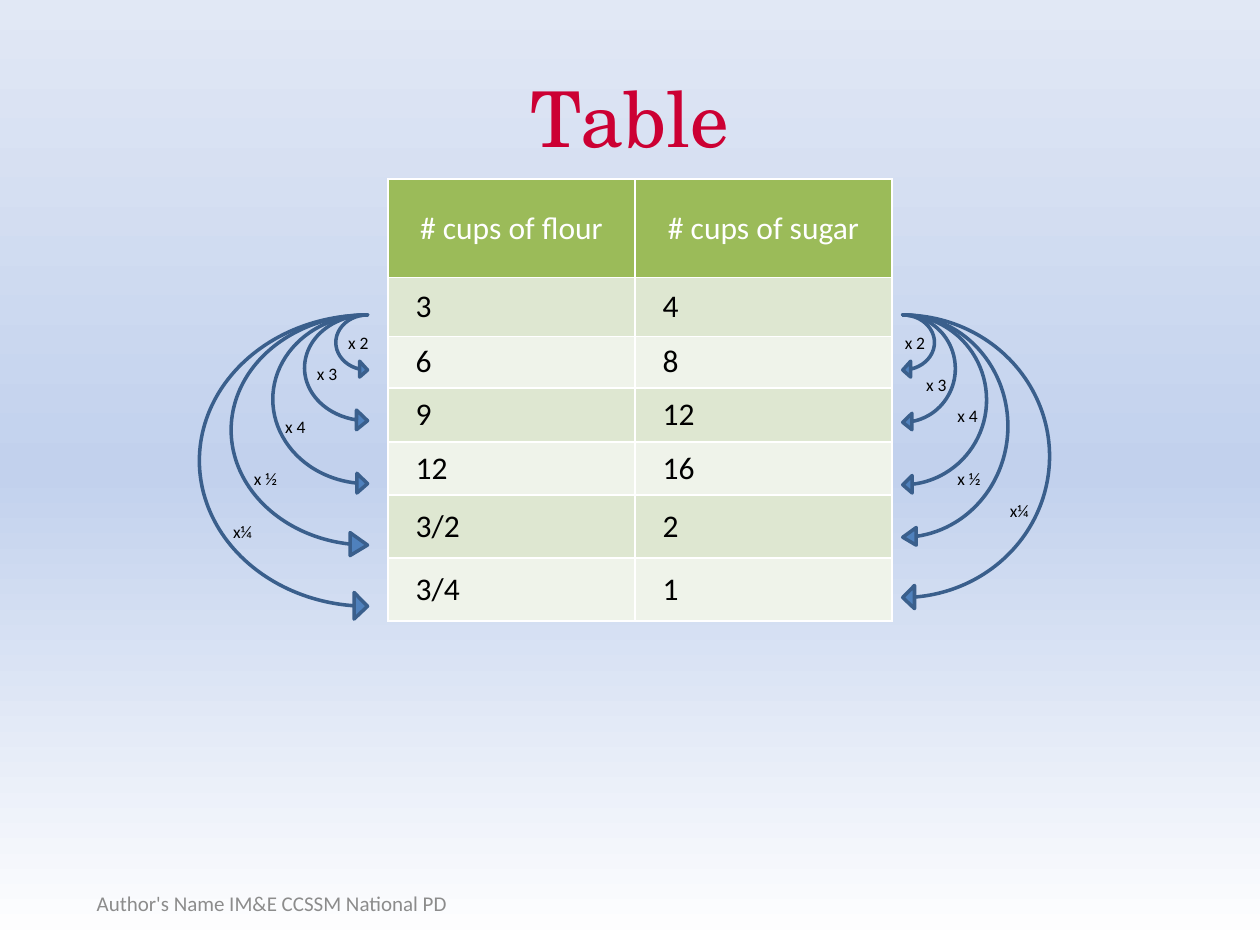
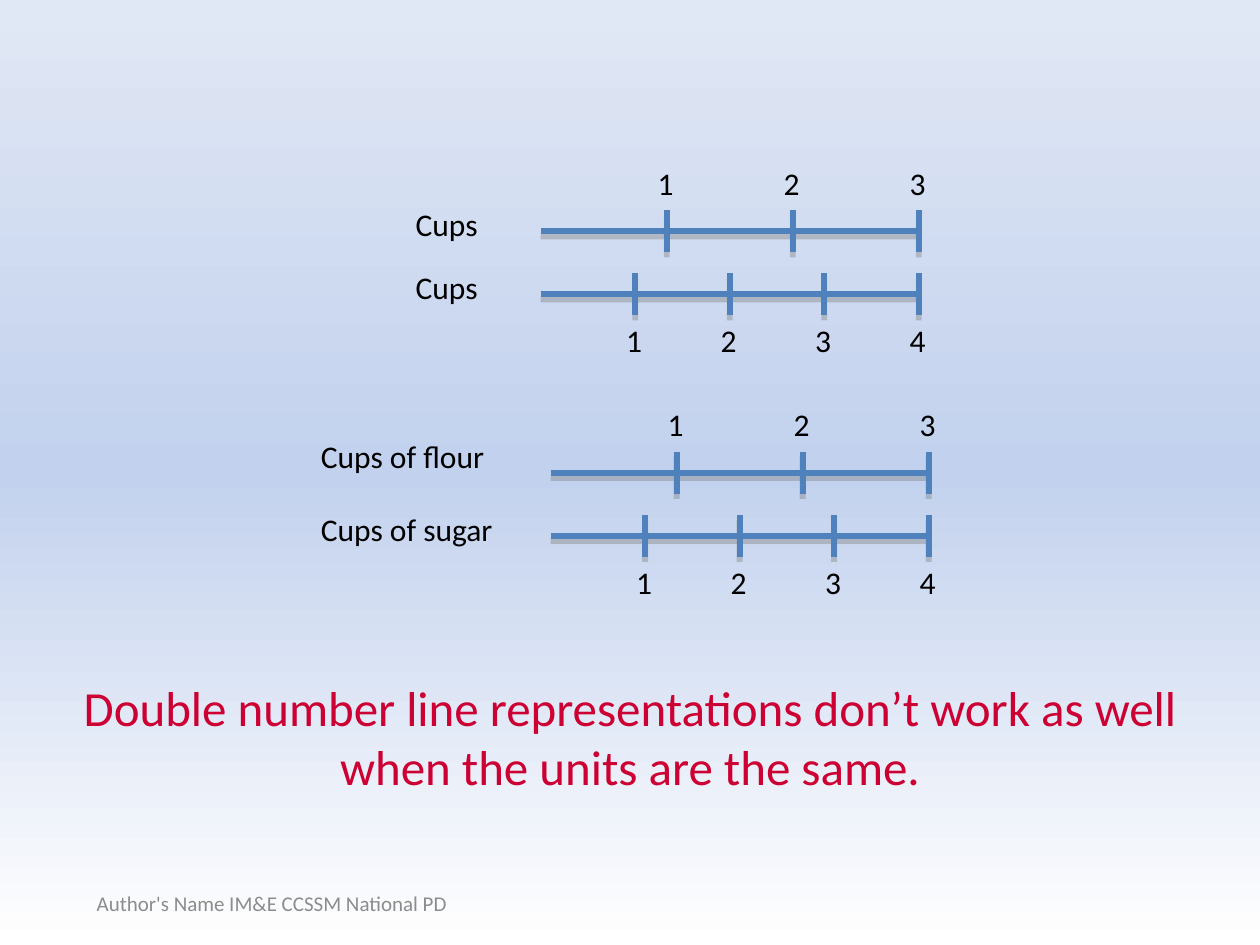
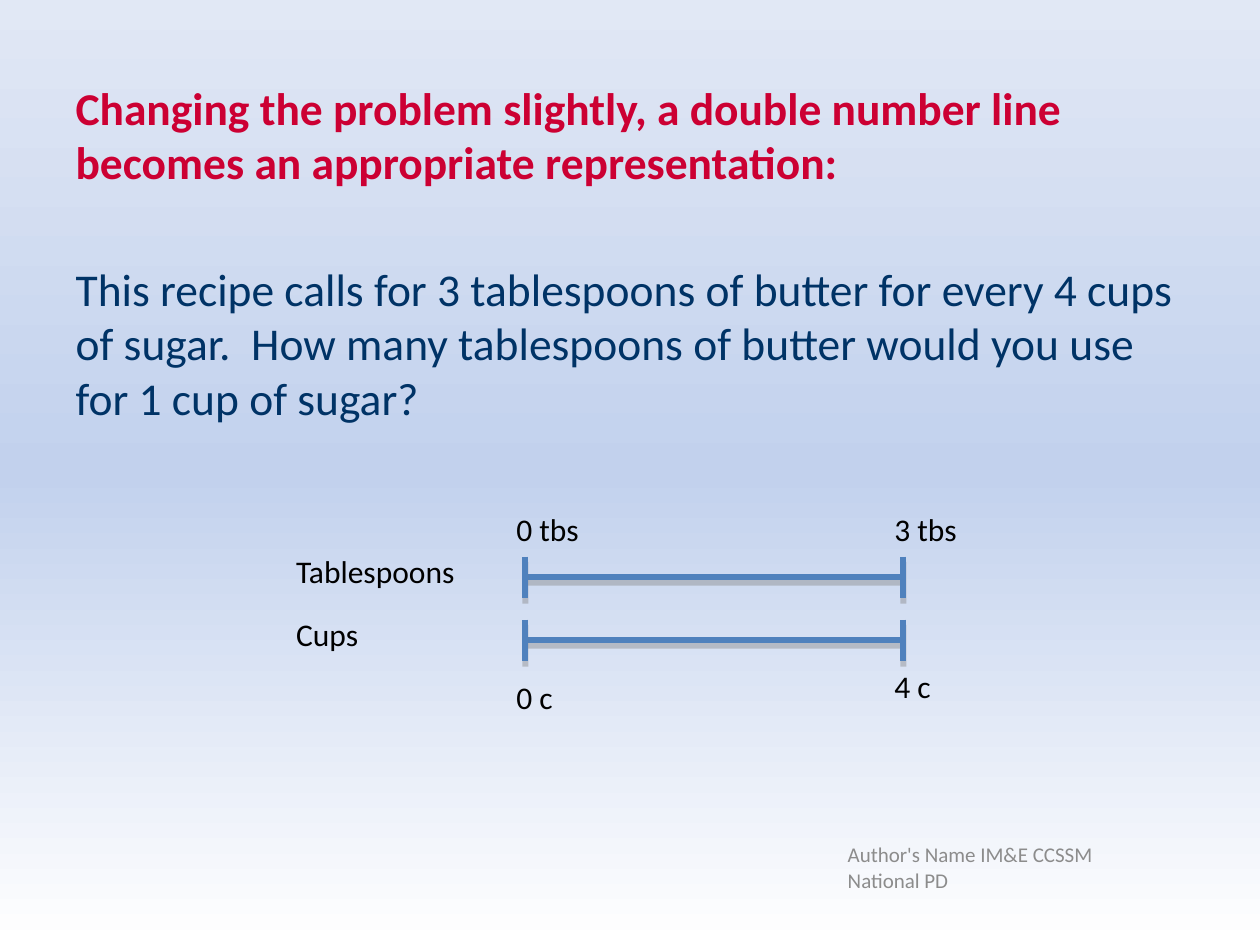
from copy import deepcopy

from lxml.etree import SubElement
from pptx import Presentation
from pptx.dml.color import RGBColor
from pptx.enum.shapes import MSO_CONNECTOR, MSO_SHAPE
from pptx.enum.text import MSO_ANCHOR, PP_ALIGN
from pptx.oxml.ns import qn
from pptx.util import Cm, Pt

WHITE = RGBColor(0xFF, 0xFF, 0xFF)
BLACK = RGBColor(0x00, 0x00, 0x00)
RED = RGBColor(0xCC, 0x00, 0x33)
NAVY = RGBColor(0x00, 0x33, 0x66)
GRAY = RGBColor(0x8C, 0x8C, 0x8C)
BLUE = RGBColor(0x4F, 0x81, 0xBD)
DARK_BLUE = RGBColor(0x3A, 0x5F, 0x8C)
GREEN = RGBColor(0x9B, 0xBB, 0x59)
LIGHT_GREEN = RGBColor(0xDE, 0xE7, 0xD1)
PALE_GREEN = RGBColor(0xEF, 0xF3, 0xEA)
BACKGROUND = [(0, WHITE), (0.5, RGBColor(0xC2, 0xD1, 0xED)), (1, RGBColor(0xE1, 0xE8, 0xF5))]

FONT = "Calibri"
TITLE_FONT = "TeX Gyre Schola"
FOOTER = "Author's Name IM&E CCSSM National PD"
LINE_LENGTH = 7.62
HALF_TICK = 0.42
ABOVE, BELOW = -1.48, 0.42


def add_text(shapes, text, x, y, w, h=1.02, size=18, color=BLACK, wrap=False):
    box = shapes.add_textbox(Cm(x), Cm(y), Cm(w), Cm(h))
    tf = box.text_frame
    tf.word_wrap = wrap
    r = tf.paragraphs[0].add_run()
    r.text = text
    r.font.name, r.font.size, r.font.color.rgb = FONT, Pt(size), color
    return tf


def add_number_line(shapes, x, y, marks, mark_w):
    """Draw a line with a tick and a text for each (fraction, text, text offset)."""
    ends = [(x, y, x + LINE_LENGTH, y)]
    for fraction, text, offset in marks:
        tick_x = x + fraction * LINE_LENGTH
        ends.append((tick_x, y - HALF_TICK, tick_x, y + HALF_TICK))
        add_text(shapes, text, tick_x - 0.43, y + offset, mark_w)
    for x1, y1, x2, y2 in ends:
        line = shapes.add_connector(MSO_CONNECTOR.STRAIGHT, Cm(x1), Cm(y1), Cm(x2), Cm(y2))
        line.line.color.rgb = BLUE
        line.line.width = Pt(3.35)
        effects = SubElement(line.element.spPr, qn("a:effectLst"))
        shadow = SubElement(effects, qn("a:outerShdw"), dist=str(Pt(3)), dir="5400000", rotWithShape="0")
        shade = SubElement(shadow, qn("a:srgbClr"), val="808080")
        SubElement(shade, qn("a:alpha"), val="40000")


prs = Presentation()
prs.slide_width, prs.slide_height = Cm(25.4), Cm(19.05)

# Shared background
master = prs.slide_master
fill = master.background.fill
fill.gradient()
fill.gradient_angle = 90
stop_list = master.element.find(".//" + qn("a:gsLst"))
stop_list.append(deepcopy(stop_list[0]))
for stop, (position, color) in zip(fill.gradient_stops, BACKGROUND):
    stop.position = position
    stop.color.rgb = color

# Slides and footers: layout, footer left, top, width
slides = []
for layout, x, y, w in [(5, 1.7, 17.7, 8.05), (6, 1.7, 17.7, 8.05), (1, 16.84, 16.97, 6.35)]:
    s = prs.slides.add_slide(prs.slide_layouts[layout])
    tf = add_text(s.shapes, FOOTER, x, y, w, size=12, color=GRAY, wrap=True)
    tf.vertical_anchor = MSO_ANCHOR.MIDDLE
    slides.append(s)
table_slide, lines_slide, recipe_slide = slides

# Slide 1: ratio table
s = table_slide
title = s.shapes.title
title.left, title.top, title.width, title.height = Cm(1.27), Cm(0.76), Cm(22.86), Cm(3.18)
title.text_frame.vertical_anchor = MSO_ANCHOR.MIDDLE
p = title.text_frame.paragraphs[0]
p.alignment = PP_ALIGN.CENTER
r = p.add_run()
r.text = "Table"
r.font.name, r.font.size, r.font.color.rgb = TITLE_FONT, Pt(44), RED

rows = [
    ("# cups of flour", "# cups of sugar"),
    ("3", "4"),
    ("6", "8"),
    ("9", "12"),
    ("12", "16"),
    ("3/2", "2"),
    ("3/4", "1"),
]
row_heights = [1.98, 1.19, 1.04, 1.09, 1.07, 1.27, 1.27]
table = s.shapes.add_table(len(rows), 2, Cm(7.82), Cm(3.61), Cm(10.16), Cm(sum(row_heights))).table
for column, w in zip(table.columns, (4.98, 5.18)):
    column.width = Cm(w)
for i, (values, h) in enumerate(zip(rows, row_heights)):
    table.rows[i].height = Cm(h)
    for j, value in enumerate(values):
        cell = table.cell(i, j)
        cell.fill.solid()
        cell.fill.fore_color.rgb = GREEN if i == 0 else LIGHT_GREEN if i % 2 else PALE_GREEN
        cell.vertical_anchor = MSO_ANCHOR.MIDDLE
        cell.margin_left = cell.margin_right = Cm(0.56)
        cell.margin_top = cell.margin_bottom = Cm(0.13)
        p = cell.text_frame.paragraphs[0]
        p.alignment = PP_ALIGN.CENTER if i == 0 else PP_ALIGN.LEFT
        r = p.add_run()
        r.text = value
        r.font.name, r.font.size, r.font.bold = FONT, Pt(18), False
        r.font.color.rgb = WHITE if i == 0 else BLACK

# Factor, label width, arrowhead adjustments
factors = [
    ("x 2", 1, 0.5, 0.25),
    ("x 3", 1, 0.311, 0.175),
    ("x 4", 1, 0.208, 0.112),
    ("x ½", 1.19, 0.168, 0.128),
    ("x¼", 1.09, 0.158, 0.08),
]
# Arrow width and height, label left and top
left_arrows = [
    (0.64, 1.27, 6.77, 6.56),
    (1.27, 2.33, 6.14, 7.2),
    (1.91, 3.6, 5.5, 8.26),
    (2.75, 4.87, 4.87, 9.31),
    (3.39, 6.14, 4.45, 10.37),
]
right_arrows = [
    (0.64, 1.27, 17.99, 6.56),
    (1.06, 2.33, 18.42, 7.41),
    (1.69, 3.6, 19.05, 8.04),
    (2.12, 4.66, 19.05, 9.31),
    (2.96, 5.93, 20.11, 9.96),
]
for arrows, on_right in [(left_arrows, False), (right_arrows, True)]:
    for (factor, label_w, *head), (w, h, label_x, label_y) in zip(factors, arrows):
        x = 18.2 if on_right else 7.41 - w
        arrow = s.shapes.add_shape(MSO_SHAPE.CURVED_RIGHT_ARROW, Cm(x), Cm(6.35), Cm(w), Cm(h))
        for i, value in enumerate([0, *head]):
            arrow.adjustments[i] = value
        if on_right:
            arrow.element.spPr.find(qn("a:xfrm")).set("flipH", "1")
        arrow.shadow.inherit = False
        arrow.fill.solid()
        arrow.fill.fore_color.rgb = BLUE
        arrow.line.color.rgb = DARK_BLUE
        arrow.line.width = Pt(2)
        add_text(s.shapes, factor, label_x, label_y, label_w, 0.69, size=10)

# Slide 2: double number lines
s = lines_slide
# Line left and top, then left, top and width of each label
double_lines = [
    (10.9, 4.66, [("Cups", 8.13, 4.01, 2.01), ("Cups", 8.13, 5.28, 2.01)]),
    (11.1, 9.53, [("Cups of flour", 6.22, 8.69, 4.14), ("Cups of sugar", 6.22, 10.16, 4.5)]),
]
for x, y, labels in double_lines:
    shapes = s.shapes.add_group_shape().shapes
    for line_y, count, offset in [(y, 3, ABOVE), (y + 1.27, 4, BELOW)]:
        marks = [(i / count, str(i), offset) for i in range(1, count + 1)]
        add_number_line(shapes, x, line_y, marks, 0.86)
    for label in labels:
        add_text(shapes, *label)
tf = add_text(
    s.shapes,
    "Double number line representations don’t work as well when the units are the same.",
    1.37, 13.54, 22.66, 2.64, size=28, color=RED, wrap=True,
)
tf.paragraphs[0].alignment = PP_ALIGN.CENTER

# Slide 3: recipe with different units
s = recipe_slide
title = s.shapes.title.element
title.getparent().remove(title)
body = s.placeholders[1]
body.left, body.top, body.width, body.height = Cm(1.27), Cm(1.48), Cm(22.86), Cm(14.6)
tf = body.text_frame
paragraphs = [
    ("Changing the problem slightly, a double number line becomes an appropriate representation:", RED, True, 0),
    ("This recipe calls for 3 tablespoons of butter for every 4 cups of sugar.  "
     "How many tablespoons of butter would you use for 1 cup of sugar?", NAVY, False, 41),
]
for i, (text, color, bold, before) in enumerate(paragraphs):
    p = tf.add_paragraph() if i else tf.paragraphs[0]
    pPr = p._p.get_or_add_pPr()
    pPr.set("marL", "0")
    pPr.set("indent", "0")
    SubElement(pPr, qn("a:buNone"))
    p.space_before = Pt(before)
    r = p.add_run()
    r.text = text
    r.font.name, r.font.size, r.font.bold, r.font.color.rgb = FONT, Pt(26), bold, color

shapes = s.shapes.add_group_shape().shapes
add_number_line(shapes, 10.59, 11.64, [(0, "0 tbs", ABOVE), (1, "3 tbs", ABOVE)], 1.9)
add_number_line(shapes, 10.59, 12.91, [(0, "0 c", 0.63), (1, "4 c", BELOW)], 1.55)
add_text(shapes, "Tablespoons", 5.72, 11, 4.11)
add_text(shapes, "Cups", 5.72, 12.27, 2.01)

prs.save("out.pptx")
